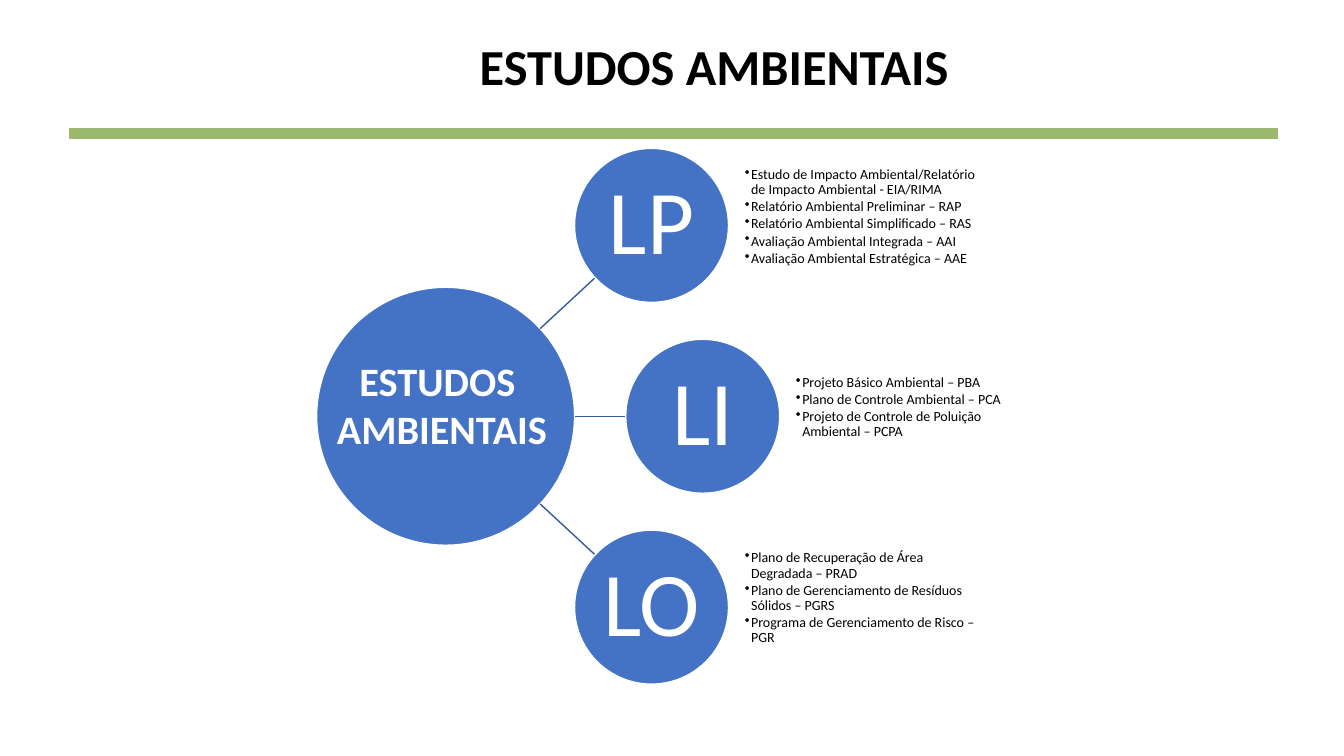
from math import hypot

from lxml.etree import SubElement
from pptx import Presentation
from pptx.dml.color import RGBColor
from pptx.enum.shapes import MSO_CONNECTOR as Connector, MSO_SHAPE as Shape
from pptx.enum.text import MSO_ANCHOR as Anchor, PP_ALIGN as Align
from pptx.oxml.ns import qn
from pptx.util import Cm, Pt

BLUE, DARK_BLUE, GREEN = "4472C4", "365B9D", "9CB86E"
WHITE, BLACK = "FFFFFF", "000000"

HUB_X, HUB_Y, HUB_RADIUS = 11.23, 10.49, 3.25
LICENCE_RADIUS = 1.94
LICENCE_STEP = 4.81
LICENCES = [
    ("LP", 16.42, [
        "Estudo de Impacto Ambiental/Relatório de Impacto Ambiental - EIA/RIMA",
        "Relatório Ambiental Preliminar – RAP",
        "Relatório Ambiental Simplificado – RAS",
        "Avaliação Ambiental Integrada – AAI",
        "Avaliação Ambiental Estratégica – AAE",
    ]),
    ("LI", 17.71, [
        "Projeto Básico Ambiental – PBA",
        "Plano de Controle Ambiental – PCA",
        "Projeto de Controle de Poluição Ambiental – PCPA",
    ]),
    ("LO", 16.42, [
        "Plano de Recuperação de Área Degradada – PRAD",
        "Plano de Gerenciamento de Resíduos Sólidos – PGRS",
        "Programa de Gerenciamento de Risco – PGR",
    ]),
]


def color(value):
    return RGBColor.from_string(value)


def set_font(para, size, value, bold=False):
    font = para.font
    font.name, font.size, font.bold = "Calibri", Pt(size), bold
    font.color.rgb = color(value)


def set_margins(frame, side, bottom):
    frame.margin_left = frame.margin_top = frame.margin_right = Cm(side)
    frame.margin_bottom = Cm(bottom)


def add_paragraphs(frame, lines):
    """Fill the frame with one paragraph per line and yield each of them."""
    frame.word_wrap = True
    for index, line in enumerate(lines):
        para = frame.add_paragraph() if index else frame.paragraphs[0]
        para.text = line
        yield para


def add_text(page, left, top, width, height):
    box = page.shapes.add_textbox(Cm(left), Cm(top), Cm(width), Cm(height))
    return box.text_frame


def add_line(page, start, end, value, weight):
    line = page.shapes.add_connector(
        Connector.STRAIGHT, *(Cm(length) for length in (*start, *end)))
    line.line.color.rgb = color(value)
    line.line.width = Pt(weight)
    SubElement(line._element.spPr, qn("a:effectLst"))


def add_circle(page, x, y, radius):
    circle = page.shapes.add_shape(
        Shape.OVAL, Cm(x - radius), Cm(y - radius), Cm(2 * radius), Cm(2 * radius))
    circle.shadow.inherit = False
    circle.fill.solid()
    circle.fill.fore_color.rgb = color(BLUE)
    circle.line.color.rgb = color(WHITE)
    circle.line.width = Pt(1)
    return circle


def add_header(page, left, top, width):
    frame = add_text(page, left + 10.11, top, 12.75, 1.8)
    for para in add_paragraphs(frame, ["ESTUDOS AMBIENTAIS"]):
        set_font(para, 36, BLACK, bold=True)
    rule_y = top + 2.6
    add_line(page, (left, rule_y), (left + width, rule_y), GREEN, 8)


def add_hub(page, x, y):
    add_circle(page, x, y, HUB_RADIUS)
    frame = add_text(page, x - 4.85, y - 1.65, 9.52, 3.63)
    for para in add_paragraphs(frame, ["ESTUDOS ", "AMBIENTAIS"]):
        para.alignment = Align.CENTER
        set_font(para, 28.8, WHITE, bold=True)


def add_spoke(page, x, y):
    """Join the rim of the hub to the rim of the licence circle at x, y."""
    across, down = x - HUB_X, y - HUB_Y
    distance = hypot(across, down)
    first = HUB_RADIUS / distance
    last = 1 - LICENCE_RADIUS / distance
    start, end = ((HUB_X + across * part, HUB_Y + down * part)
                  for part in (first, last))
    add_line(page, start, end, DARK_BLUE, 1)


def add_studies(page, left, top, studies):
    frame = add_text(page, left, top, 5.84, 2 * LICENCE_RADIUS)
    frame.vertical_anchor = Anchor.MIDDLE
    set_margins(frame, 0, 0.44)
    for para in add_paragraphs(frame, studies):
        para.line_spacing = 0.9
        para.space_after = Pt(1.5)
        properties = para._p.get_or_add_pPr()
        properties.set("marL", str(Cm(0.16)))
        properties.set("indent", str(-Cm(0.16)))
        SubElement(properties, qn("a:buChar"), char="•")
        set_font(para, 10, BLACK)


def add_licence(page, x, y, name, studies):
    add_spoke(page, x, y)
    frame = add_circle(page, x, y, LICENCE_RADIUS).text_frame
    frame.vertical_anchor = Anchor.MIDDLE
    set_margins(frame, 0.13, 0.13)
    for para in add_paragraphs(frame, [name]):
        para.alignment = Align.CENTER
        para.line_spacing = 0.9
        set_font(para, 65, WHITE)
    add_studies(page, x + LICENCE_RADIUS + 0.41, y - LICENCE_RADIUS, studies)


def main():
    deck = Presentation()
    deck.slide_width, deck.slide_height = Cm(33.87), Cm(19.05)
    page = deck.slides.add_slide(deck.slide_layouts[6])
    add_header(page, 1.73, 0.76, 30.48)
    add_hub(page, HUB_X, HUB_Y)
    for index, (name, x, studies) in enumerate(LICENCES):
        add_licence(page, x, HUB_Y + (index - 1) * LICENCE_STEP, name, studies)
    deck.save("out.pptx")


if __name__ == "__main__":
    main()
